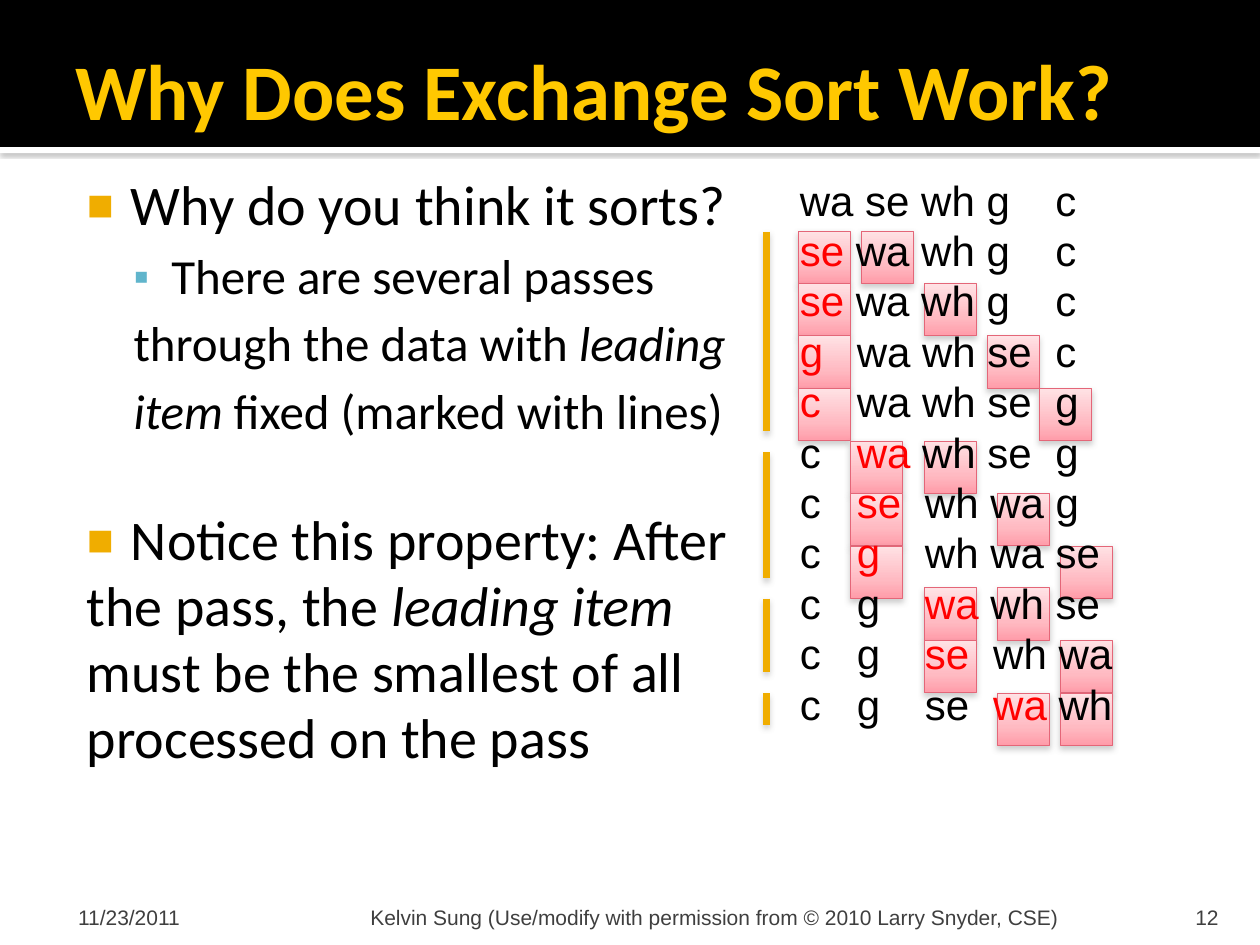
from lxml.etree import SubElement as Sub
from pptx import Presentation
from pptx.dml.color import RGBColor as RGB
from pptx.enum.shapes import MSO_CONNECTOR as LINE, MSO_SHAPE as SHAPE
from pptx.enum.text import MSO_ANCHOR as ANCHOR, MSO_AUTO_SIZE as AUTO, PP_ALIGN as ALIGN
from pptx.oxml.ns import qn
from pptx.util import Pt

COLORS = {
    "black": "000000", "white": "FFFFFF", "title": "FFC800", "gray": "3F3F3F",
    "red": "FF0000", "gold": "F0AD00", "teal": "60B5CC", "edge": "E46678",
    "shade": "808080",
}
PINKS = [(0, "FFE2E5"), (65, "FFBAC2"), (100, "FF9CA9")]

# Text between asterisks is accented: italic in the body, red in the trace.
TITLE = "Why Does Exchange Sort Work?"
# (level, bulleted, space before, text)
BODY = [
    (0, True, 0, "Why do you think it sorts?"),
    (1, True, 5.6, "There are several passes"),
    (1, False, 5.6, "through the data with *leading*"),
    (1, False, 5.6, "*item *fixed (marked with lines)"),
    (0, True, 38.5, "Notice this property: After"),
    (0, False, 0, "the pass, the *leading item*"),
    (0, False, 0, "must be the smallest of all"),
    (0, False, 0, "processed on the pass"),
]
# size, left margin, indent, mark, mark colour, mark size in percent
LEVELS = [
    (32, 34.5, -25.2, "■", "gold", 80),
    (28, 57.6, -21.6, "▪", "teal", 90),
]
TRACE = [
    "wa se wh g\tc",
    "*se* wa wh g\tc",
    "*se* wa wh g\tc",
    "*g*\twa wh se\tc",
    "*c*\twa wh se\tg",
    "c\t*wa* wh se\tg",
    "c\t*se*\twh wa g",
    "c\t*g*\twh wa se",
    "c\tg\t*wa* wh se",
    "c\tg\t*se*\twh wa",
    "c\tg\tse\t*wa* wh",
]
TABS = [32.5, 71.5, 110.5, 146]
# top of pass, height of its line, left of leading item, lefts of compared items
PASSES = [
    (132, 114, 456, [492, 528, 564, 594]),
    (252, 72, 486, [528, 570, 606]),
    (336, 42, 528, [570, 606]),
    (396, 18, 570, [606]),
]
LINE_TOPS = [132.5, 258.5, 342, 396]
LINE_LEFT, CELL = 438, 30
FOOT = [
    ("11/23/2011", 36, 168, 8.6, ALIGN.LEFT),
    ("Kelvin Sung (Use/modify with permission from © 2010 Larry Snyder, CSE)",
     208, 434, 3.6, ALIGN.LEFT),
    ("12", 646, 57.5, 7.2, ALIGN.RIGHT),
]


def color(name):
    return RGB.from_string(COLORS[name])


def write(para, text, size=24, font="Arial", ink="black", bold=None,
          accent=None, align=ALIGN.LEFT, before=0, pitch=1.0):
    """Fill a paragraph; accent is a colour name or "italic"."""
    para.alignment, para.line_spacing = align, pitch
    para.space_before = Pt(before)
    for i, part in enumerate(text.split("*")):
        if not part:
            continue
        run = para.add_run()
        run.text = part
        face = run.font
        face.size, face.name, face.bold = Pt(size), font, bold
        marked = i % 2 == 1
        if accent == "italic":
            face.italic = marked
        face.color.rgb = color(accent if marked and accent != "italic" else ink)


def place(shape, left, top, width, height):
    shape.left, shape.top = Pt(left), Pt(top)
    shape.width, shape.height = Pt(width), Pt(height)


def setup(frame, insets, anchor=ANCHOR.TOP):
    frame.word_wrap, frame.auto_size = True, AUTO.NONE
    frame.vertical_anchor = anchor
    (frame.margin_left, frame.margin_top,
     frame.margin_right, frame.margin_bottom) = map(Pt, insets)


def paras(frame, count):
    return [frame.paragraphs[0]] + [frame.add_paragraph() for _ in range(count - 1)]


def bullet(para, level, shown):
    _, margin, indent, mark, ink, size = LEVELS[level]
    props = para._p.get_or_add_pPr()
    props.set("marL", str(Pt(margin)))
    props.set("indent", str(Pt(indent)))
    if not shown:
        Sub(props, qn("a:buNone"))
        return
    Sub(Sub(props, qn("a:buClr")), qn("a:srgbClr"), val=COLORS[ink])
    Sub(props, qn("a:buSzPct"), val=str(size * 1000))
    Sub(props, qn("a:buFont"), typeface="Arial")
    Sub(props, qn("a:buChar"), char=mark)


def shadow(shape, alpha=38, blur=3.5, dist=2):
    """Drop a soft shadow straight down; call after fill and line are set."""
    cast = Sub(Sub(shape._element.spPr, qn("a:effectLst")), qn("a:outerShdw"),
               blurRad=str(Pt(blur)), dist=str(Pt(dist)), dir="5400000",
               algn="t", rotWithShape="0")
    tint = Sub(cast, qn("a:srgbClr"), val=COLORS["shade"])
    Sub(tint, qn("a:alpha"), val=str(alpha * 1000))


def band(shapes, top, height, ink):
    bar = shapes.add_shape(SHAPE.RECTANGLE, 0, Pt(top), Pt(720), Pt(height))
    bar.fill.solid()
    bar.fill.fore_color.rgb = color(ink)
    bar.line.fill.background()
    return bar


def cell(shapes, left, top):
    box = shapes.add_shape(SHAPE.RECTANGLE, Pt(left), Pt(top), Pt(CELL), Pt(CELL))
    box.fill.gradient()
    box.fill.gradient_angle = 270
    stops = box._element.spPr.find(qn("a:gradFill")).find(qn("a:gsLst"))
    stops.clear()
    for at, ink in PINKS:
        Sub(Sub(stops, qn("a:gs"), pos=str(at * 1000)), qn("a:srgbClr"), val=ink)
    box.line.color.rgb, box.line.width = color("edge"), Pt(0.5)
    shadow(box)


def main():
    deck = Presentation()
    deck.slide_width, deck.slide_height = Pt(720), Pt(540)
    slide = deck.slides.add_slide(deck.slide_layouts[1])
    shapes = slide.shapes
    title, body = shapes.title, slide.placeholders[1]

    shadow(band(shapes, 84, 3.6, "white"), 60, 2.5, 0.8)
    band(shapes, 0, 84, "black").shadow.inherit = False
    for holder in (title, body):  # bring in front of the bands
        shapes._spTree.append(holder._element)

    place(title, 36, 12, 648, 78)
    setup(title.text_frame, (7.2, 3.6, 3.6, 3.6), ANCHOR.MIDDLE)
    write(title.text_frame.paragraphs[0], TITLE, size=45, font="Calibri",
          ink="title", bold=True)

    place(body, 36, 90, 648, 408)
    setup(body.text_frame, (4.3, 8.5, 7.2, 3.6))
    for para, (level, shown, gap, text) in zip(paras(body.text_frame, len(BODY)), BODY):
        para.level = level
        write(para, text, size=LEVELS[level][0], font="Calibri",
              accent="italic", before=gap, pitch=0.985)
        bullet(para, level, shown)

    for text, left, width, inset, align in FOOT:
        box = shapes.add_textbox(Pt(left), Pt(510), Pt(width), Pt(21.5))
        setup(box.text_frame, (inset, 3.6, 7.2, 0), ANCHOR.BOTTOM)
        write(box.text_frame.paragraphs[0], text, size=12, ink="gray", align=align)

    for top, _, lead, others in PASSES:
        for i, left in enumerate(others):
            cell(shapes, lead, top + i * CELL)
            cell(shapes, left, top + i * CELL)

    trace = shapes.add_textbox(Pt(450), Pt(96), Pt(216), Pt(327))
    setup(trace.text_frame, (7.2, 3.6, 7.2, 3.6))
    for para, text in zip(paras(trace.text_frame, len(TRACE)), TRACE):
        write(para, text, accent="red", pitch=Pt(28.8))
        stops = Sub(para._p.get_or_add_pPr(), qn("a:tabLst"))
        for at in TABS:
            Sub(stops, qn("a:tab"), pos=str(Pt(at)), algn="l")

    for top, (_, height, _, _) in zip(LINE_TOPS, PASSES):
        line = shapes.add_connector(LINE.STRAIGHT, Pt(LINE_LEFT), Pt(top),
                                    Pt(LINE_LEFT), Pt(top + height))
        line.line.color.rgb, line.line.width = color("gold"), Pt(3.78)
        shadow(line)

    deck.save("out.pptx")


if __name__ == "__main__":
    main()
